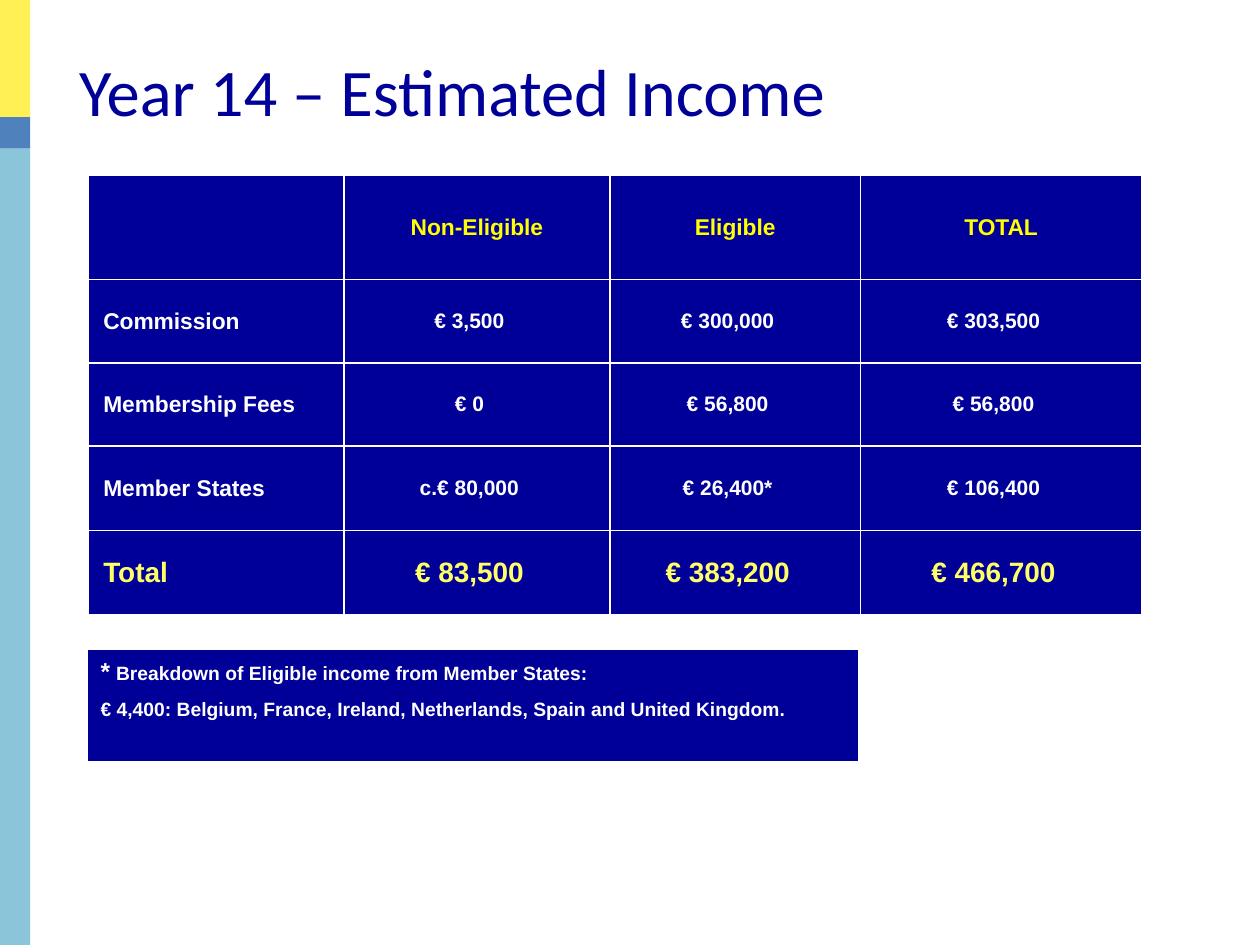
"""Build the Year 14 estimated income slide."""
from dataclasses import dataclass

from lxml import etree
from pptx import Presentation
from pptx import util as u
from pptx.dml.color import RGBColor
from pptx.enum import shapes, text
from pptx.oxml.ns import qn

WIDTH, HEIGHT = 10, 7.5
LEFT, TABLE_TOP = 0.7, 1.39
COLUMNS = (2.03, 2.11, 1.99, 2.23)
BAR_WIDTH = 0.24


@dataclass(frozen=True)
class Theme:
    navy: str = "000099"
    white: str = "FFFFFF"
    header: str = "FFFF00"
    total: str = "FFFF66"
    body_font: str = "Arial"
    title_font: str = "Calibri"
    title_size: int = 38
    total_size: int = 16
    star_size: int = 14
    label_size: int = 13
    value_size: int = 12
    note_size: int = 11


@dataclass(frozen=True)
class Run:
    text: str
    size: int
    color: str
    font: str = "Arial"
    bold: bool = True


@dataclass(frozen=True)
class Row:
    cells: tuple[str, ...]
    height: float
    label_size: int
    value_size: int
    color: str


@dataclass(frozen=True)
class Band:
    height: float
    color: str


T = Theme()
ROWS = (
    Row(("", "Non-Eligible", "Eligible", "TOTAL"), 0.83, T.label_size, T.label_size, T.header),
    Row(("Commission", "€ 3,500", "€ 300,000", "€ 303,500"), 0.66, T.label_size, T.value_size, T.white),
    Row(("Membership Fees", "€ 0", "€ 56,800", "€ 56,800"), 0.66, T.label_size, T.value_size, T.white),
    Row(("Member States", "c.€ 80,000", "€ 26,400*", "€ 106,400"), 0.67, T.label_size, T.value_size, T.white),
    Row(("Total", "€ 83,500", "€ 383,200", "€ 466,700"), 0.67, T.total_size, T.total_size, T.total),
)
BANDS = (Band(0.93, "FFF056"), Band(0.25, "4F81BD"), Band(6.32, "8AC5DA"))
NOTE = (
    (Run("*", T.star_size, T.white), Run(" ", T.value_size, T.white),
     Run("Breakdown of Eligible income from Member States:", T.note_size, T.white)),
    (Run("€ 4,400: Belgium, France, Ireland, Netherlands, Spain and United Kingdom.",
         T.note_size, T.white),),
)


def add_run(p, run: Run) -> None:
    """Append one formatted run to a paragraph."""
    r = p.add_run()
    r.text = run.text
    r.font.name, r.font.size, r.font.bold = run.font, u.Pt(run.size), run.bold
    r.font.color.rgb = RGBColor.from_string(run.color)


def add_rect(s, left: float, top: float, width: float, height: float, color: str):
    """Add a flat rectangle without an outline."""
    sp = s.shapes.add_shape(shapes.MSO_SHAPE.RECTANGLE,
                            *map(u.Inches, (left, top, width, height)))
    sp.shadow.inherit = False
    sp.fill.solid()
    sp.fill.fore_color.rgb = RGBColor.from_string(color)
    sp.line.fill.background()
    return sp


def set_borders(cell) -> None:
    """Put a thin white line on every side of a cell."""
    tc_pr = cell._tc.get_or_add_tcPr()
    for i, side in enumerate(("a:lnL", "a:lnR", "a:lnT", "a:lnB")):
        ln = etree.Element(qn(side), w=str(u.Pt(1)))
        fill = etree.SubElement(ln, qn("a:solidFill"))
        etree.SubElement(fill, qn("a:srgbClr"), val=T.white)
        tc_pr.insert(i, ln)


def fill_cell(cell, value: str, row: Row, is_label: bool) -> None:
    """Style one table cell and write its text."""
    is_header = row is ROWS[0]
    cell.fill.solid()
    cell.fill.fore_color.rgb = RGBColor.from_string(T.navy)
    set_borders(cell)
    cell.vertical_anchor = text.MSO_ANCHOR.MIDDLE
    cell.margin_top = cell.margin_bottom = 0
    cell.margin_left = u.Inches(0.12 if is_label else 0)
    cell.margin_right = u.Inches(0 if is_label or is_header else 0.12)
    p = cell.text_frame.paragraphs[0]
    p.alignment = text.PP_ALIGN.LEFT if is_label else text.PP_ALIGN.CENTER
    if value:
        add_run(p, Run(value, row.label_size if is_label else row.value_size, row.color))


def add_income_table(s) -> None:
    """Add the income table."""
    size = (sum(COLUMNS), sum(row.height for row in ROWS))
    table = s.shapes.add_table(len(ROWS), len(COLUMNS),
                               *map(u.Inches, (LEFT, TABLE_TOP, *size))).table
    for column, width in zip(table.columns, COLUMNS):
        column.width = u.Inches(width)
    for i, row in enumerate(ROWS):
        table.rows[i].height = u.Inches(row.height)
        for j, value in enumerate(row.cells):
            fill_cell(table.cell(i, j), value, row, j == 0)


def add_note(s) -> None:
    """Add the footnote panel below the table."""
    tf = add_rect(s, LEFT, 5.16, 6.11, 0.88, T.navy).text_frame
    tf.word_wrap = True
    tf.vertical_anchor = text.MSO_ANCHOR.TOP
    for i, runs in enumerate(NOTE):
        p = tf.add_paragraph() if i else tf.paragraphs[0]
        p.alignment = text.PP_ALIGN.LEFT
        p.space_before = u.Pt(6.5 if i else 0)
        for run in runs:
            add_run(p, run)


def add_title(s) -> None:
    """Add the slide title."""
    tf = s.shapes.add_textbox(*map(u.Inches, (0.53, 0.35, 0.9 * WIDTH, 0.74))).text_frame
    tf.word_wrap = True
    add_run(tf.paragraphs[0], Run("Year 14 – Estimated Income", T.title_size, T.navy,
                                  T.title_font, False))


def add_side_bar(s) -> None:
    """Stack the coloured bands down the left edge."""
    top = 0
    for band in BANDS:
        add_rect(s, 0, top, BAR_WIDTH, band.height, band.color)
        top += band.height


def main() -> None:
    """Build and save the presentation."""
    prs = Presentation()
    prs.slide_width, prs.slide_height = u.Inches(WIDTH), u.Inches(HEIGHT)
    s = prs.slides.add_slide(prs.slide_layouts[6])
    add_income_table(s)
    add_note(s)
    add_title(s)
    add_side_bar(s)
    prs.save("out.pptx")


if __name__ == "__main__":
    main()
